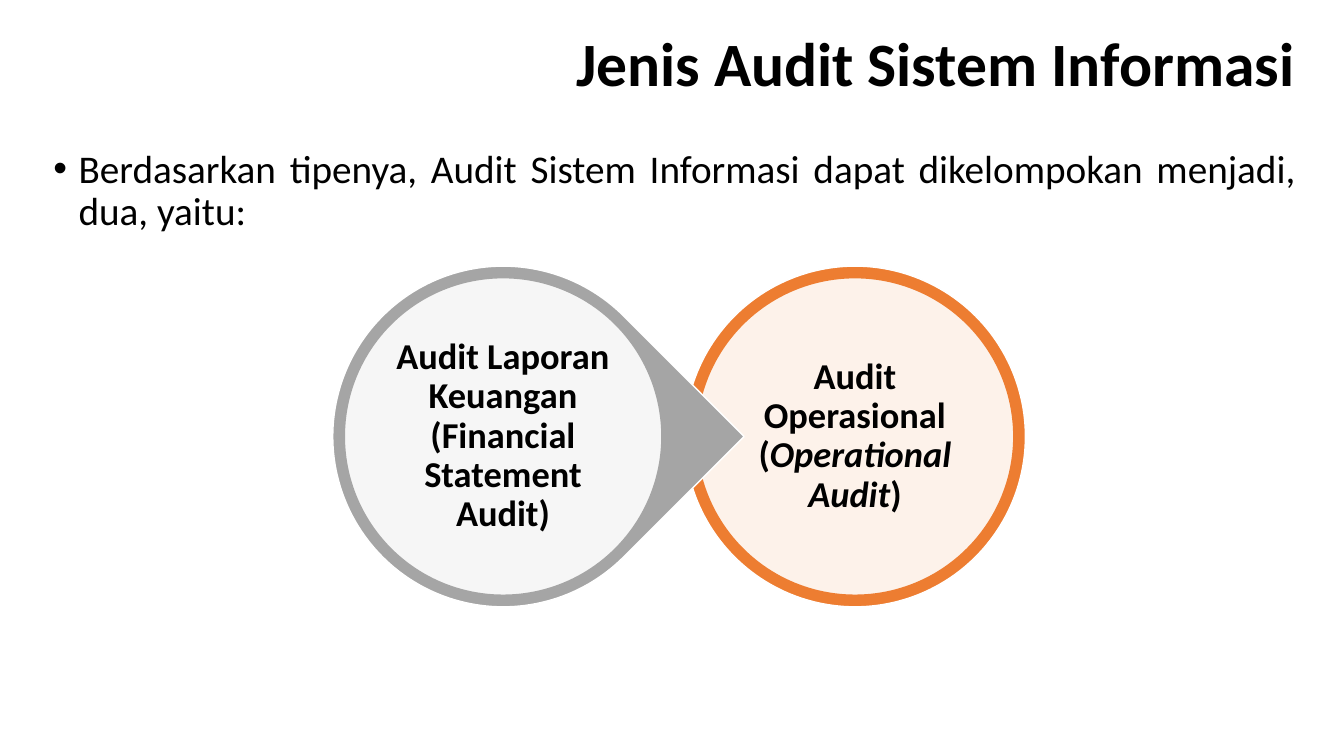
from dataclasses import dataclass

from lxml import etree
from pptx import Presentation
from pptx.dml.color import RGBColor
from pptx.enum.shapes import MSO_SHAPE
from pptx.enum.text import MSO_ANCHOR, MSO_AUTO_SIZE, PP_ALIGN
from pptx.oxml.ns import qn
from pptx.shapes.autoshape import Shape
from pptx.slide import Slide
from pptx.text.text import _Paragraph
from pptx.util import Inches, Pt

BLACK = RGBColor(0x00, 0x00, 0x00)
WHITE = RGBColor(0xFF, 0xFF, 0xFF)
GRAY = RGBColor(0xA5, 0xA5, 0xA5)
ORANGE = RGBColor(0xED, 0x7D, 0x31)
OVAL, TEAR = MSO_SHAPE.OVAL, MSO_SHAPE.TEAR
RIGHT, CENTER, JUSTIFY = PP_ALIGN.RIGHT, PP_ALIGN.CENTER, PP_ALIGN.JUSTIFY
MIDDLE, TOP = MSO_ANCHOR.MIDDLE, MSO_ANCHOR.TOP
FIXED = MSO_AUTO_SIZE.NONE

FONT = "Calibri"
MID_Y = 4.33
RING, DISC, LABEL = 3.38, 3.15, 2.25
INSET = 0.04


@dataclass
class Phrase:
    text: str
    slant: bool = False


@dataclass
class Badge:
    mid: float
    kind: MSO_SHAPE
    turn: float
    color: RGBColor
    label: list[Phrase]


BADGES = [
    Badge(8.48, OVAL, 0, ORANGE, [
        Phrase("Audit Operasional ("),
        Phrase("Operational Audit", True),
        Phrase(")"),
    ]),
    Badge(4.99, TEAR, 45, GRAY, [
        Phrase("Audit Laporan Keuangan (Financial Statement Audit)"),
    ]),
]


def place(shape: Shape, left: float, top: float, width: float, height: float) -> None:
    shape.left, shape.top = Inches(left), Inches(top)
    shape.width, shape.height = Inches(width), Inches(height)


def style(para: _Paragraph, size: int, align: PP_ALIGN, bold: bool) -> None:
    para.alignment = align
    para.line_spacing = 0.9
    para.space_before = Pt(0)
    for run in para.runs:
        run.font.name = FONT
        run.font.size = Pt(size)
        run.font.bold = bold
        run.font.color.rgb = BLACK


def add_title(slide: Slide) -> None:
    title = slide.shapes.title
    place(title, 2.47, 0.21, 10.48, 0.91)
    frame = title.text_frame
    frame.text = "Jenis Audit Sistem Informasi"
    frame.auto_size = FIXED
    frame.vertical_anchor = MIDDLE
    style(frame.paragraphs[0], 44, RIGHT, True)


def add_body(slide: Slide) -> None:
    body = slide.placeholders[1]
    place(body, 0.43, 1.43, 12.52, 5.52)
    frame = body.text_frame
    frame.text = (
        "Berdasarkan tipenya, Audit Sistem Informasi dapat "
        "dikelompokan menjadi, dua, yaitu:"
    )
    frame.auto_size = FIXED
    frame.vertical_anchor = TOP
    para = frame.paragraphs[0]
    props = para._p.get_or_add_pPr()
    props.set("marL", str(Inches(0.25)))
    props.set("indent", str(Inches(-0.25)))
    etree.SubElement(props, qn("a:buFont")).set("typeface", "Arial")
    etree.SubElement(props, qn("a:buChar")).set("char", "•")
    style(para, 28, JUSTIFY, False)


def add_round(slide: Slide, kind: MSO_SHAPE, mid: float, size: float,
              fill: RGBColor, line: RGBColor) -> Shape:
    shape = slide.shapes.add_shape(
        kind, Inches(mid - size / 2), Inches(MID_Y - size / 2),
        Inches(size), Inches(size),
    )
    shape.shadow.inherit = False
    shape.fill.solid()
    shape.fill.fore_color.rgb = fill
    shape.line.color.rgb = line
    shape.line.width = Pt(1)
    return shape


def add_label(slide: Slide, badge: Badge) -> None:
    box = slide.shapes.add_textbox(
        Inches(badge.mid - LABEL / 2), Inches(MID_Y - LABEL / 2),
        Inches(LABEL), Inches(LABEL),
    )
    frame = box.text_frame
    frame.word_wrap = True
    frame.vertical_anchor = MIDDLE
    frame.margin_left = frame.margin_right = Inches(INSET)
    frame.margin_top = frame.margin_bottom = Inches(INSET)
    para = frame.paragraphs[0]
    for phrase in badge.label:
        run = para.add_run()
        run.text = phrase.text
        run.font.italic = phrase.slant
    style(para, 26, CENTER, True)


def add_badge(slide: Slide, badge: Badge) -> None:
    ring = add_round(slide, badge.kind, badge.mid, RING, badge.color, WHITE)
    ring.rotation = badge.turn
    disc = add_round(slide, OVAL, badge.mid, DISC, WHITE, badge.color)
    tint = disc._element.spPr.find(qn("a:solidFill"))[0]
    etree.SubElement(tint, qn("a:alpha")).set("val", "90000")
    add_label(slide, badge)


def main() -> None:
    deck = Presentation()
    deck.slide_width, deck.slide_height = Inches(13.33), Inches(7.5)
    slide = deck.slides.add_slide(deck.slide_layouts[1])
    add_title(slide)
    add_body(slide)
    for badge in BADGES:
        add_badge(slide, badge)
    deck.save("out.pptx")


if __name__ == "__main__":
    main()
